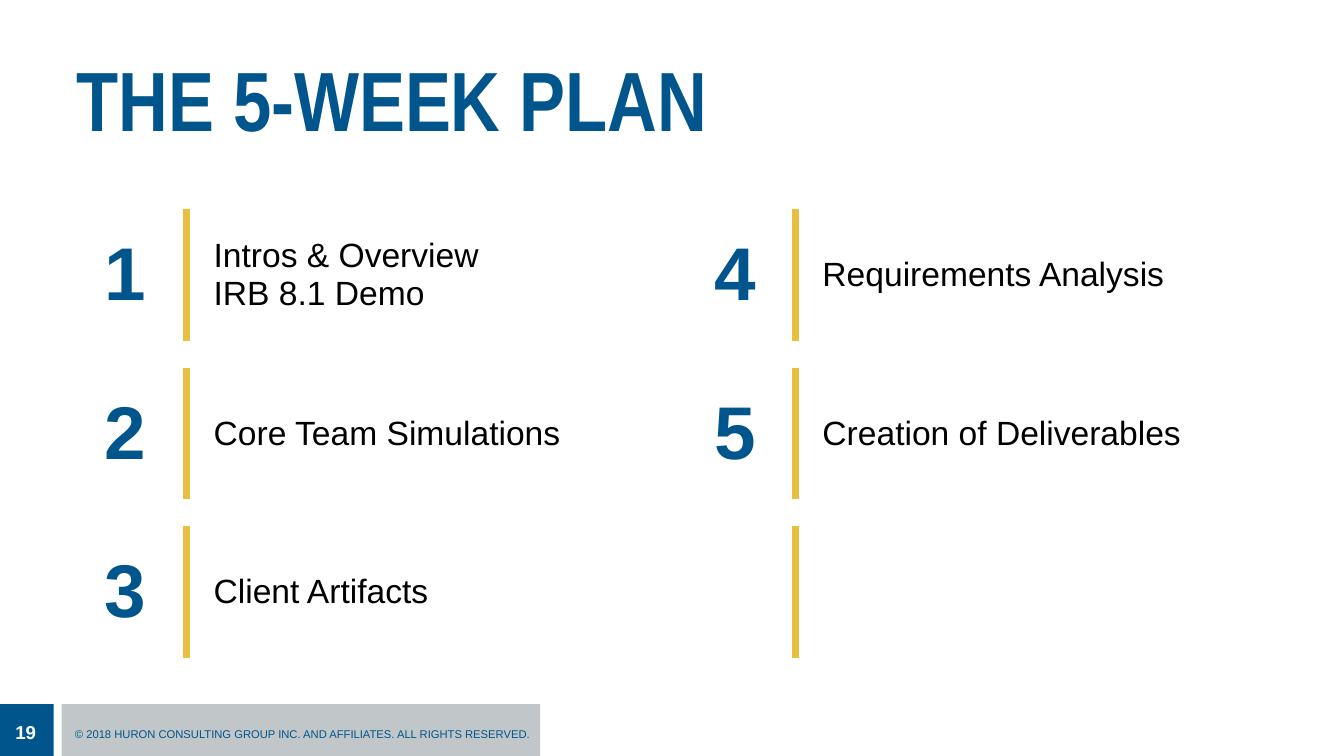
from dataclasses import dataclass

from lxml.etree import SubElement
from pptx import Presentation
from pptx.dml.color import RGBColor
from pptx.enum.shapes import MSO_SHAPE as SHAPE
from pptx.enum.text import MSO_ANCHOR as ANCHOR, PP_ALIGN as ALIGN
from pptx.oxml import parse_xml
from pptx.oxml.ns import nsdecls, qn
from pptx.util import Pt

PX = 4572
BLUE, GOLD, GREY = "00558C", "E8BF41", "C1C6C8"
WHITE, BLACK = "FFFFFF", "000000"


@dataclass(frozen=True)
class Box:
    x: int
    y: int
    w: int
    h: int

    def emu(self) -> tuple:
        return tuple(v * PX for v in (self.x, self.y, self.w, self.h))


@dataclass(frozen=True)
class Style:
    size: int
    color: str
    bold: bool = False
    font: str = "Arial"


@dataclass(frozen=True)
class Week:
    number: str
    lines: tuple


NUMBER = Style(40, BLUE, True)
TOPIC = Style(18, BLACK)

COLUMNS = (
    (
        Week("1", ("Intros & Overview", "IRB 8.1 Demo")),
        Week("2", ("Core Team Simulations",)),
        Week("3", ("Client Artifacts",)),
    ),
    (
        Week("4", ("Requirements Analysis",)),
        Week("5", ("Creation of Deliverables",)),
        Week("", ()),
    ),
)
COL_WIDTHS = (184, 726, 180, 722)
ROW_H, GAP_H = 196, 40


def rgb(color: str) -> RGBColor:
    return RGBColor.from_string(color)


def add_run(p, text: str, style: Style) -> None:
    r = p.add_run()
    r.text = text
    r.font.size = Pt(style.size)
    r.font.bold = style.bold
    r.font.name = style.font
    r.font.color.rgb = rgb(style.color)


def add_rect(s, box: Box, color: str) -> None:
    sp = s.shapes.add_shape(SHAPE.RECTANGLE, *box.emu())
    sp.shadow.inherit = False
    sp.fill.solid()
    sp.fill.fore_color.rgb = rgb(color)
    sp.line.fill.background()


def add_text(s, box: Box, text: str, style: Style, wrap: bool = True):
    tf = s.shapes.add_textbox(*box.emu()).text_frame
    tf.word_wrap = wrap
    add_run(tf.paragraphs[0], text, style)
    return tf


def set_borders(cell, gold_side: str) -> None:
    tc_pr = cell._tc.get_or_add_tcPr()
    for i, side in enumerate("LRTB"):
        paint = "<a:noFill/>"
        if side == gold_side:
            paint = f'<a:solidFill><a:srgbClr val="{GOLD}"/></a:solidFill>'
        tc_pr.insert(i, parse_xml(
            f'<a:ln{side} {nsdecls("a")} w="{Pt(4.5)}">{paint}</a:ln{side}>'))


def fill_cell(cell, lines: tuple, style: Style, align: ALIGN, side: str) -> None:
    cell.vertical_anchor = ANCHOR.MIDDLE
    set_borders(cell, side)
    tf = cell.text_frame
    for i, line in enumerate(lines):
        p = tf.add_paragraph() if i else tf.paragraphs[0]
        p.alignment = align
        add_run(p, line, style)


def add_plan(s, x: int, y: int) -> None:
    heights = [GAP_H if i % 2 else ROW_H for i in range(5)]
    box = Box(x, y, sum(COL_WIDTHS), sum(heights))
    table = s.shapes.add_table(len(heights), len(COL_WIDTHS), *box.emu()).table
    table.first_row = table.horz_banding = False
    for column, width in zip(table.columns, COL_WIDTHS):
        column.width = width * PX
    for row, height in zip(table.rows, heights):
        row.height = height * PX
        for cell in row.cells:
            cell.fill.background()
            if height == GAP_H:
                set_borders(cell, "")
                cell.margin_top = cell.margin_bottom = 0
                p = cell.text_frame.paragraphs[0]
                SubElement(p._p, qn("a:endParaRPr"), sz="600")
    for c, weeks in enumerate(COLUMNS):
        for i, week in enumerate(weeks):
            number = table.cell(2 * i, 2 * c)
            topic = table.cell(2 * i, 2 * c + 1)
            fill_cell(number, (week.number,) if week.number else (),
                      NUMBER, ALIGN.CENTER, "R")
            fill_cell(topic, week.lines, TOPIC, ALIGN.LEFT, "L")
            topic.margin_left = topic.margin_right = 40 * PX


def add_footer(s) -> None:
    add_rect(s, Box(0, 1048, 80, 77), BLUE)
    tf = add_text(s, Box(2, 1063, 80, 54), "19", Style(10, WHITE, True))
    tf.vertical_anchor = ANCHOR.MIDDLE
    tf.margin_left = 0
    tf.paragraphs[0]._p.get_or_add_pPr().set("marL", str(21 * PX))
    add_rect(s, Box(92, 1048, 712, 77), GREY)
    add_text(s, Box(92, 1073, 734, 40),
             "© 2018 HURON CONSULTING GROUP INC. AND AFFILIATES. ALL RIGHTS RESERVED.",
             Style(6, BLUE), wrap=False)


def main() -> None:
    prs = Presentation()
    prs.slide_width, prs.slide_height = 2000 * PX, 1125 * PX
    s = prs.slides.add_slide(prs.slide_layouts[6])
    add_footer(s)
    title = add_text(s, Box(94, 90, 1810, 282), "THE 5-WEEK PLAN",
                     Style(45, BLUE, True, "Arial Narrow"))
    title.paragraphs[0].line_spacing = 0.8
    add_plan(s, 94, 311)
    prs.save("out.pptx")


if __name__ == "__main__":
    main()
